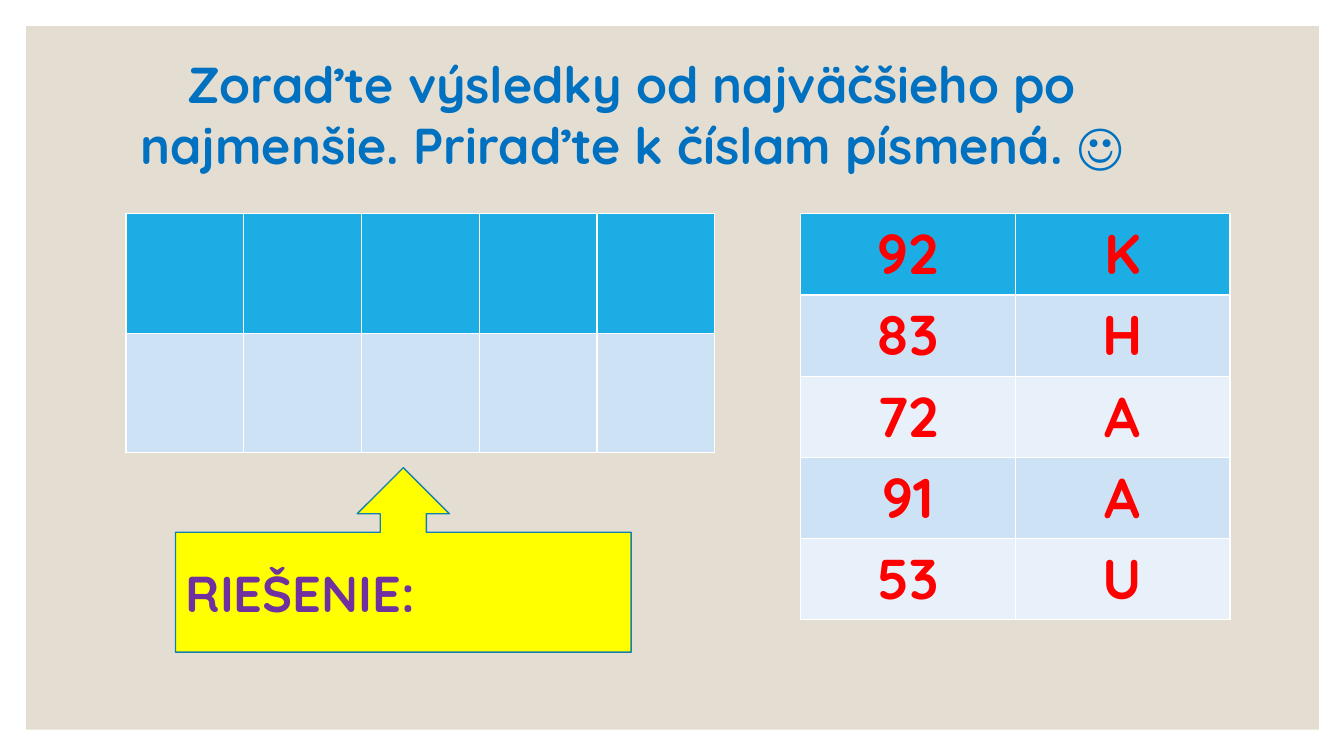
import pptx
import pptx.util
import pptx.dml.color
import pptx.enum.shapes
import pptx.enum.text

Inches = pptx.util.Inches
FONT = "Quicksand"
COLORS = {
    "panel": "E3DED1",
    "title": "0070C0",
    "header": "1CADE4",
    "band_dark": "CDE3F5",
    "band_light": "E8F1FA",
    "answer": "FF0000",
    "callout": "FFFF00",
    "callout_line": "1580A9",
    "solution": "7030A0",
}
ANSWERS = [("92", "K"), ("83", "H"), ("72", "A"), ("91", "A"), ("53", "U")]
EMPTY_GRID = [[""] * 5] * 2


def color(name):
    return pptx.dml.color.RGBColor.from_string(COLORS[name])


def fill_solid(target, name):
    target.fill.solid()
    target.fill.fore_color.rgb = color(name)


def write(text_frame, text, size, color_name, alignment):
    text_frame.text = text
    paragraph = text_frame.paragraphs[0]
    paragraph.alignment = alignment
    font = paragraph.runs[0].font
    font.name = FONT
    font.size = pptx.util.Pt(size)
    font.bold = True
    font.color.rgb = color(color_name)


def add_filled_shape(slide, kind, box, fill_name):
    shape = slide.shapes.add_shape(kind, *map(Inches, box))
    shape.shadow.inherit = False
    fill_solid(shape, fill_name)
    return shape


def add_panel(slide, box):
    kind = pptx.enum.shapes.MSO_SHAPE.RECTANGLE
    panel = add_filled_shape(slide, kind, box, "panel")
    panel.line.fill.background()


def add_title(slide, box):
    text_frame = slide.shapes.add_textbox(*map(Inches, box)).text_frame
    text_frame.word_wrap = True
    write(text_frame,
          "Zoraďte výsledky od najväčšieho po najmenšie. Priraďte k číslam písmená. ☺",
          36, "title", pptx.enum.text.PP_ALIGN.CENTER)


def add_banded_table(slide, box, rows):
    """Fill the box with equal cells: a header row, then alternating bands."""
    frame = slide.shapes.add_table(len(rows), len(rows[0]), *map(Inches, box))
    for row_index, values in enumerate(rows):
        if row_index == 0:
            fill_name = "header"
        else:
            fill_name = "band_dark" if row_index % 2 else "band_light"
        for column_index, value in enumerate(values):
            cell = frame.table.cell(row_index, column_index)
            fill_solid(cell, fill_name)
            if value:
                write(cell.text_frame, value, 40, "answer",
                      pptx.enum.text.PP_ALIGN.CENTER)


def add_solution_callout(slide, box):
    kind = pptx.enum.shapes.MSO_SHAPE.UP_ARROW_CALLOUT
    callout = add_filled_shape(slide, kind, box, "callout")
    callout.line.color.rgb = color("callout_line")
    callout.line.width = pptx.util.Pt(1)
    callout.text_frame.vertical_anchor = pptx.enum.text.MSO_ANCHOR.MIDDLE
    write(callout.text_frame, "RIEŠENIE:", 36, "solution",
          pptx.enum.text.PP_ALIGN.LEFT)


def main():
    presentation = pptx.Presentation()
    presentation.slide_width = Inches(13.33)
    presentation.slide_height = Inches(7.5)
    slide = presentation.slides.add_slide(presentation.slide_layouts[6])
    add_panel(slide, (0.26, 0.26, 12.82, 6.98))
    add_title(slide, (0.77, 0.48, 10.99, 1.31))
    add_banded_table(slide, (7.94, 2.12, 4.26, 4.03), ANSWERS)
    add_banded_table(slide, (1.25, 2.12, 5.84, 2.37), EMPTY_GRID)
    add_solution_callout(slide, (1.74, 4.64, 4.52, 1.83))
    presentation.save("out.pptx")


if __name__ == "__main__":
    main()
